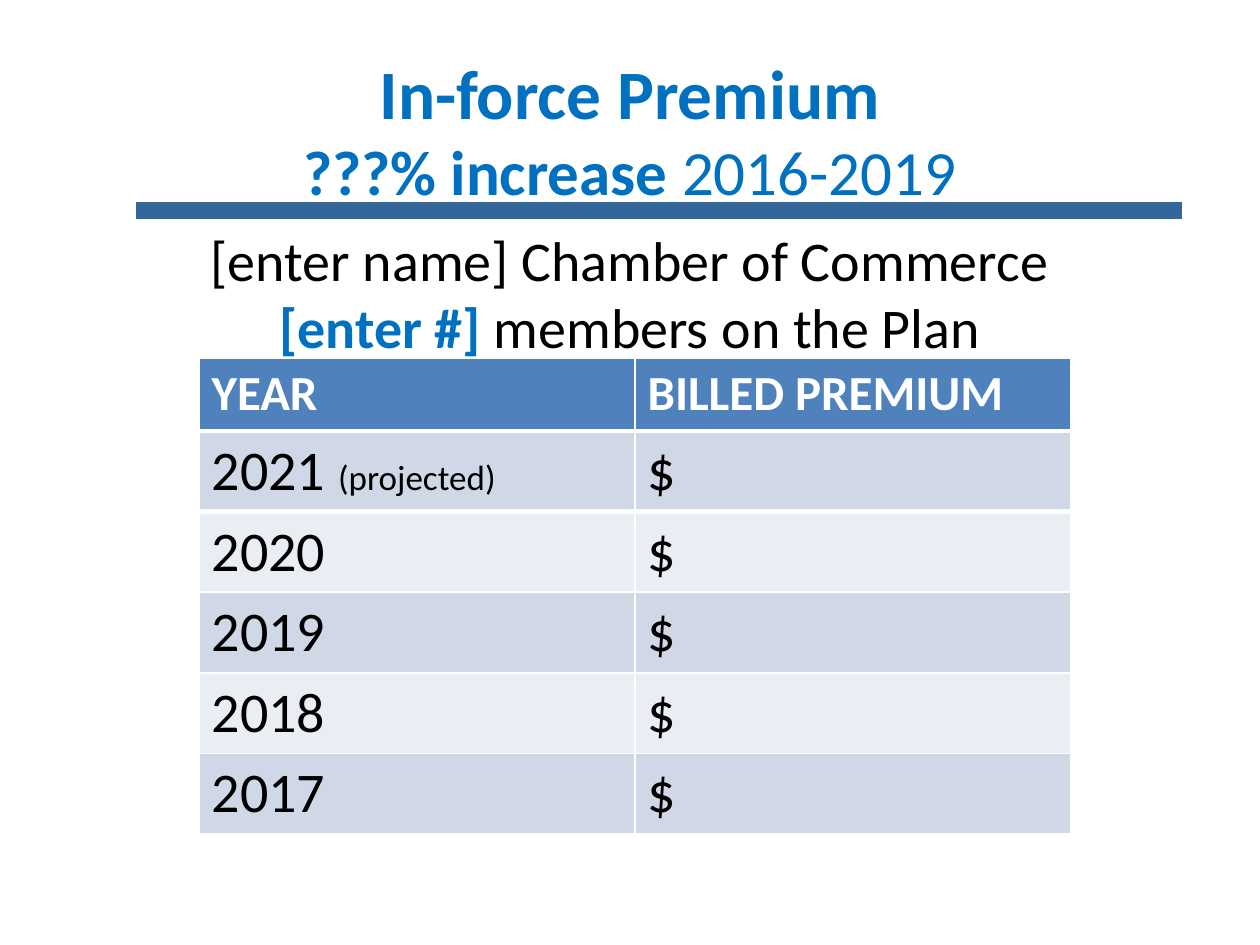
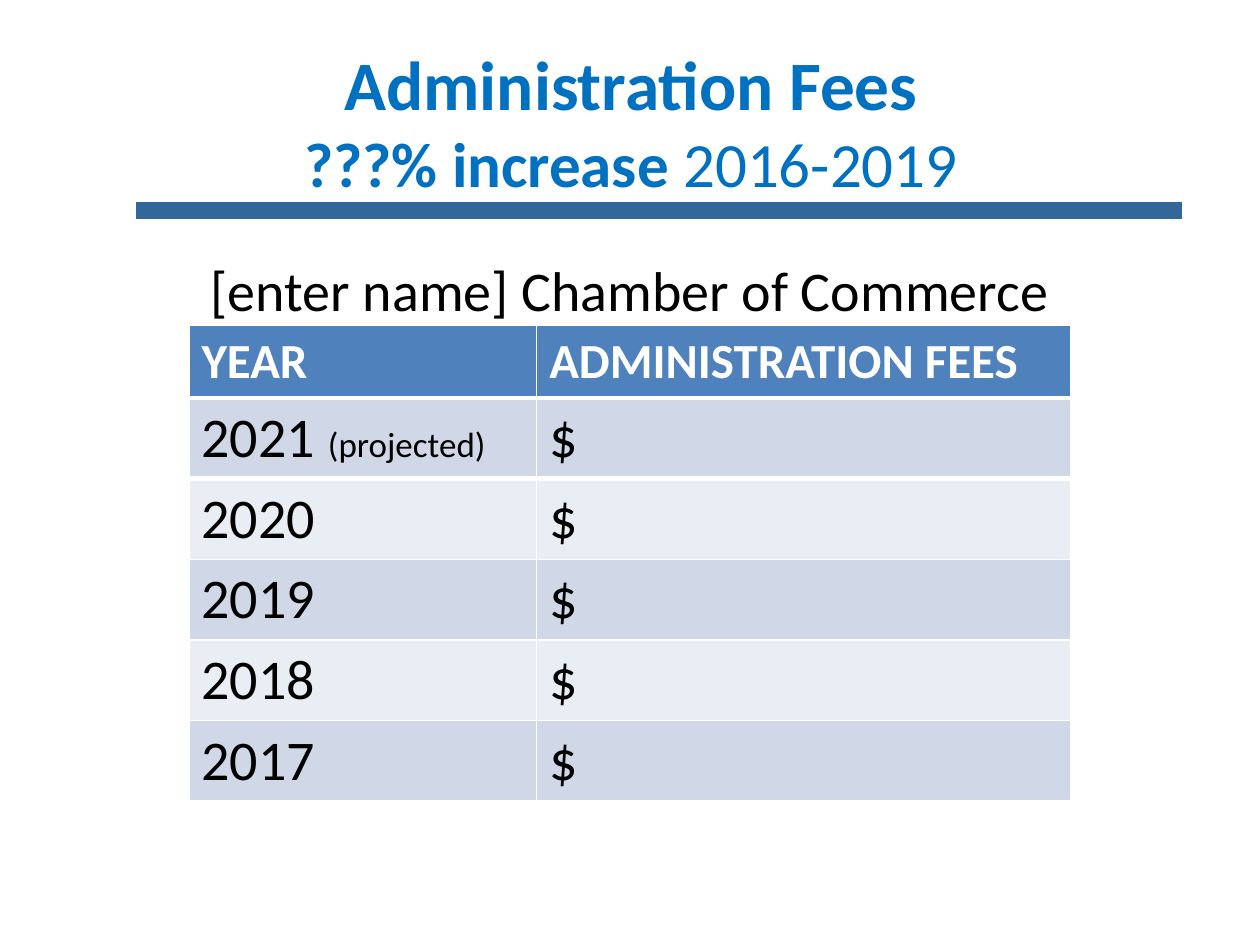
import pptx
import pptx.dml.color
import pptx.enum.shapes
import pptx.enum.text
import pptx.oxml
import pptx.oxml.ns
import pptx.util
from pptx.util import Inches

COLORS = {
    "title": "0070C0",
    "rule": "336699",
    "text": "000000",
    "header": "4F81BD",
    "header_text": "FFFFFF",
    "border": "FFFFFF",
    "band_dark": "D0D8E8",
    "band_light": "E9EDF4",
}
FONT = "Calibri"
TITLE = {"size": 39.6, "bold": True, "color": "title"}
INCREASE = {"size": 36, "bold": True, "color": "title"}
PERIOD = {"size": 36, "bold": False, "color": "title"}
BODY = {"size": 32, "bold": False, "color": "text"}
COUNT = {"size": 32, "bold": True, "color": "title"}
NOTE = {"size": 20, "bold": False, "color": "text"}
HEADER = {"size": 28, "bold": True, "color": "header_text"}

CHAMBER = [("[enter name] Chamber of Commerce", BODY)]
MEMBERS = [("[enter #]", COUNT), (" members on the Plan", BODY)]
YEARS = ["2021 ", "2020", "2019", "2018", "2017"]
HEADER_HEIGHT = 0.58
ROW_HEIGHT = 0.64

PAGES = [
    {
        "title": "In-force Premium",
        "title_box": (0.5, 0.35, 9, 1.35),
        "subtitle": [CHAMBER, MEMBERS],
        "subtitle_box": (0.5, 1.74, 9, 1.2),
        "amount": "BILLED PREMIUM",
        "table_corner": (1.58, 2.84),
        "columns": (3.46, 3.46),
    },
    {
        "title": "Administration Fees",
        "title_box": (0.51, 0.28, 9, 1.35),
        "subtitle": [CHAMBER],
        "subtitle_box": (0.5, 1.98, 9, 0.65),
        "amount": "ADMINISTRATION FEES",
        "table_corner": (1.5, 2.58),
        "columns": (2.76, 4.24),
    },
]


def rgb(name):
    return pptx.dml.color.RGBColor.from_string(COLORS[name])


def write_spans(para, spans):
    for text, style in spans:
        span = para.add_run()
        span.text = text
        values = {
            "name": FONT,
            "size": pptx.util.Pt(style["size"]),
            "bold": style["bold"],
        }
        for name, value in values.items():
            setattr(span.font, name, value)
        span.font.color.rgb = rgb(style["color"])


def add_centered_text(page, box, lines, anchor, inset):
    frame = page.shapes.add_textbox(*map(Inches, box)).text_frame
    values = {
        "word_wrap": True,
        "vertical_anchor": anchor,
        "margin_top": Inches(inset),
        "margin_bottom": Inches(inset),
    }
    for name, value in values.items():
        setattr(frame, name, value)
    for number, spans in enumerate(lines):
        para = frame.add_paragraph() if number else frame.paragraphs[0]
        para.alignment = pptx.enum.text.PP_ALIGN.CENTER
        write_spans(para, spans)


def add_rule(page):
    ends = map(Inches, (1.08, 1.67, 9.38, 1.67))
    rule = page.shapes.add_connector(pptx.enum.shapes.MSO_CONNECTOR.STRAIGHT, *ends)
    rule.line.color.rgb = rgb("rule")
    rule.line.width = pptx.util.Pt(9.5)
    properties = rule._element.spPr
    properties.append(pptx.oxml.parse_xml(f'<a:effectLst {pptx.oxml.ns.nsdecls("a")}/>'))


def add_title(page, box, title):
    lines = [[(title, TITLE)], [("???% increase ", INCREASE), ("2016-2019", PERIOD)]]
    add_centered_text(page, box, lines, pptx.enum.text.MSO_ANCHOR.MIDDLE, 0)


def add_subtitle(page, box, lines):
    add_centered_text(page, box, lines, pptx.enum.text.MSO_ANCHOR.TOP, 0.05)


def set_border(cell, side, points):
    border = pptx.oxml.parse_xml(
        f'<a:{side} {pptx.oxml.ns.nsdecls("a")} w="{pptx.util.Pt(points)}">'
        f'<a:solidFill><a:srgbClr val="{COLORS["border"]}"/></a:solidFill></a:{side}>'
    )
    cell._tc.get_or_add_tcPr().insert(0, border)


def add_year_table(page, corner, columns, amount):
    rows = [[[("YEAR", HEADER)], [(amount, HEADER)]]]
    rows += [[[(year, BODY)], [("$", BODY)]] for year in YEARS]
    rows[1][0].append(("(projected)", NOTE))
    heights = [HEADER_HEIGHT] + [ROW_HEIGHT] * len(YEARS)
    box = (*corner, sum(columns), sum(heights))
    table = page.shapes.add_table(len(rows), len(columns), *map(Inches, box)).table
    for column, width in zip(table.columns, columns):
        column.width = Inches(width)
    for number, (row, height) in enumerate(zip(table.rows, heights)):
        row.height = Inches(height)
        band = "band_dark" if number % 2 else "band_light"
        for cell, spans in zip(row.cells, rows[number]):
            cell.fill.solid()
            cell.fill.fore_color.rgb = rgb(band if number else "header")
            write_spans(cell.text_frame.paragraphs[0], spans)
    for upper, lower in zip(table.rows[0].cells, table.rows[1].cells):
        set_border(upper, "lnB", 3)
        set_border(lower, "lnT", 3)


def add_page(deck, content):
    page = deck.slides.add_slide(deck.slide_layouts[6])
    add_rule(page)
    add_title(page, content["title_box"], content["title"])
    add_subtitle(page, content["subtitle_box"], content["subtitle"])
    add_year_table(page, content["table_corner"], content["columns"], content["amount"])


def main():
    deck = pptx.Presentation()
    deck.slide_width = Inches(10)
    deck.slide_height = Inches(7.5)
    for content in PAGES:
        add_page(deck, content)
    deck.save("out.pptx")


if __name__ == "__main__":
    main()
